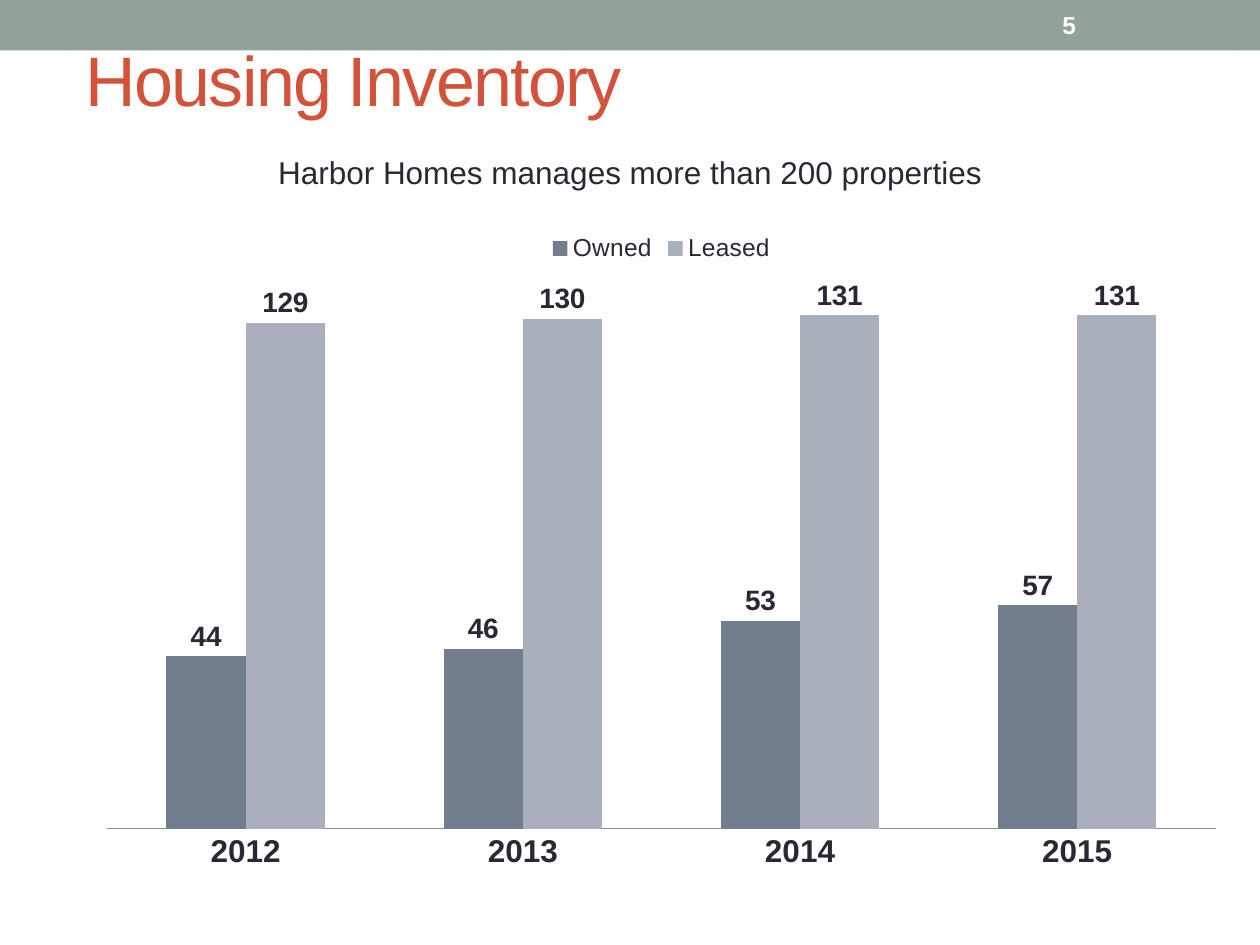
import pptx
import pptx.chart.data
import pptx.dml.color
import pptx.enum.chart
import pptx.enum.shapes
import pptx.enum.text
import pptx.util
from lxml import etree

Pt = pptx.util.Pt
ALIGN = pptx.enum.text.PP_ALIGN
ANCHOR = pptx.enum.text.MSO_ANCHOR
CHART = pptx.enum.chart

COLORS = {
    "band": "93A299",
    "title": "D2533C",
    "text": "292934",
    "white": "FFFFFF",
    "axis": "8C8C8C",
    "Owned": "727E8E",
    "Leased": "A9AFBB",
}
YEARS = ["2012", "2013", "2014", "2015"]
PROPERTIES = {"Owned": [44, 46, 53, 57], "Leased": [129, 130, 131, 131]}


def color(name):
    return pptx.dml.color.RGBColor.from_string(COLORS[name])


def fill_solid(fill, name):
    fill.solid()
    fill.fore_color.rgb = color(name)


def format_font(font, color_name, **values):
    for attribute, value in {"name": "Arial", **values}.items():
        setattr(font, attribute, value)
    font.color.rgb = color(color_name)


def add_text(slide, box, text, color_name, size, bold=False,
             align=ALIGN.LEFT, anchor=ANCHOR.MIDDLE):
    frame = slide.shapes.add_textbox(*map(Pt, box)).text_frame
    frame.word_wrap = True
    frame.vertical_anchor = anchor
    paragraph = frame.paragraphs[0]
    paragraph.alignment = align
    run = paragraph.add_run()
    run.text = text
    format_font(run.font, color_name, size=Pt(size), bold=bold)
    return run


def add_header(slide, box):
    left, top, width, height = box
    band = slide.shapes.add_shape(
        pptx.enum.shapes.MSO_SHAPE.RECTANGLE, *map(Pt, box))
    band.shadow.inherit = False
    fill_solid(band.fill, "band")
    band.line.fill.background()
    add_text(slide, (left + 600, top + 1.5, 84, height - 3), "5", "white", 14, bold=True)


def add_headings(slide, box):
    left, top, width, height = box
    title = add_text(slide, (left + 42, top, 642, 90), "Housing Inventory", "title", 40)
    title.font._element.set("spc", "-100")
    add_text(slide, (left, top + 84, width, height - 84),
             "Harbor Homes manages more than 200 properties", "text", 18,
             align=ALIGN.CENTER, anchor=ANCHOR.TOP)


def set_plot_layout(chart, **fractions):
    """Fix the inner plot area, as fractions of the chart."""
    plot_area = chart._chartSpace.chart.plotArea
    namespace = etree.QName(plot_area).namespace
    for old_layout in plot_area.findall(f"{{{namespace}}}layout"):
        plot_area.remove(old_layout)
    layout = etree.Element(f"{{{namespace}}}layout")
    manual = etree.SubElement(layout, f"{{{namespace}}}manualLayout")
    values = {"layoutTarget": "inner", "xMode": "edge", "yMode": "edge", **fractions}
    for tag, value in values.items():
        etree.SubElement(manual, f"{{{namespace}}}{tag}").set("val", str(value))
    plot_area.insert(0, layout)


def add_inventory_chart(slide, box):
    data = pptx.chart.data.CategoryChartData()
    data.categories = YEARS
    for name, values in PROPERTIES.items():
        data.add_series(name, values)
    chart = slide.shapes.add_chart(
        CHART.XL_CHART_TYPE.COLUMN_CLUSTERED, *map(Pt, box), data).chart
    format_font(chart.font, "text", size=Pt(10))
    chart.has_title = False
    chart.has_legend = True
    chart.legend.position = CHART.XL_LEGEND_POSITION.TOP
    chart.legend.include_in_layout = False
    format_font(chart.legend.font, "text", size=Pt(14))
    set_plot_layout(chart, x=0.02, y=0.09, w=0.96, h=0.83)

    value_axis = chart.value_axis
    for attribute, value in {"visible": False, "has_major_gridlines": False,
                             "minimum_scale": 0, "maximum_scale": 140}.items():
        setattr(value_axis, attribute, value)
    category_axis = chart.category_axis
    category_axis.major_tick_mark = CHART.XL_TICK_MARK.NONE
    category_axis.format.line.color.rgb = color("axis")
    category_axis.format.line.width = Pt(0.5)
    format_font(category_axis.tick_labels.font, "text", size=Pt(18), bold=True)

    plot = chart.plots[0]
    plot.gap_width = 150
    plot.overlap = 0
    plot.vary_by_categories = False
    for series in plot.series:
        fill_solid(series.format.fill, series.name)
        labels = series.data_labels
        labels.show_value = True
        labels.position = CHART.XL_LABEL_POSITION.OUTSIDE_END
        format_font(labels.font, "text", size=Pt(16), bold=True)


def main():
    presentation = pptx.Presentation()
    presentation.slide_width = Pt(720)
    presentation.slide_height = Pt(540)
    slide = presentation.slides.add_slide(presentation.slide_layouts[6])
    add_header(slide, (0, 0, 720, 28.8))
    add_headings(slide, (0, 0, 720, 113))
    add_inventory_chart(slide, (48, 126, 660, 378))
    presentation.save("out.pptx")


if __name__ == "__main__":
    main()
